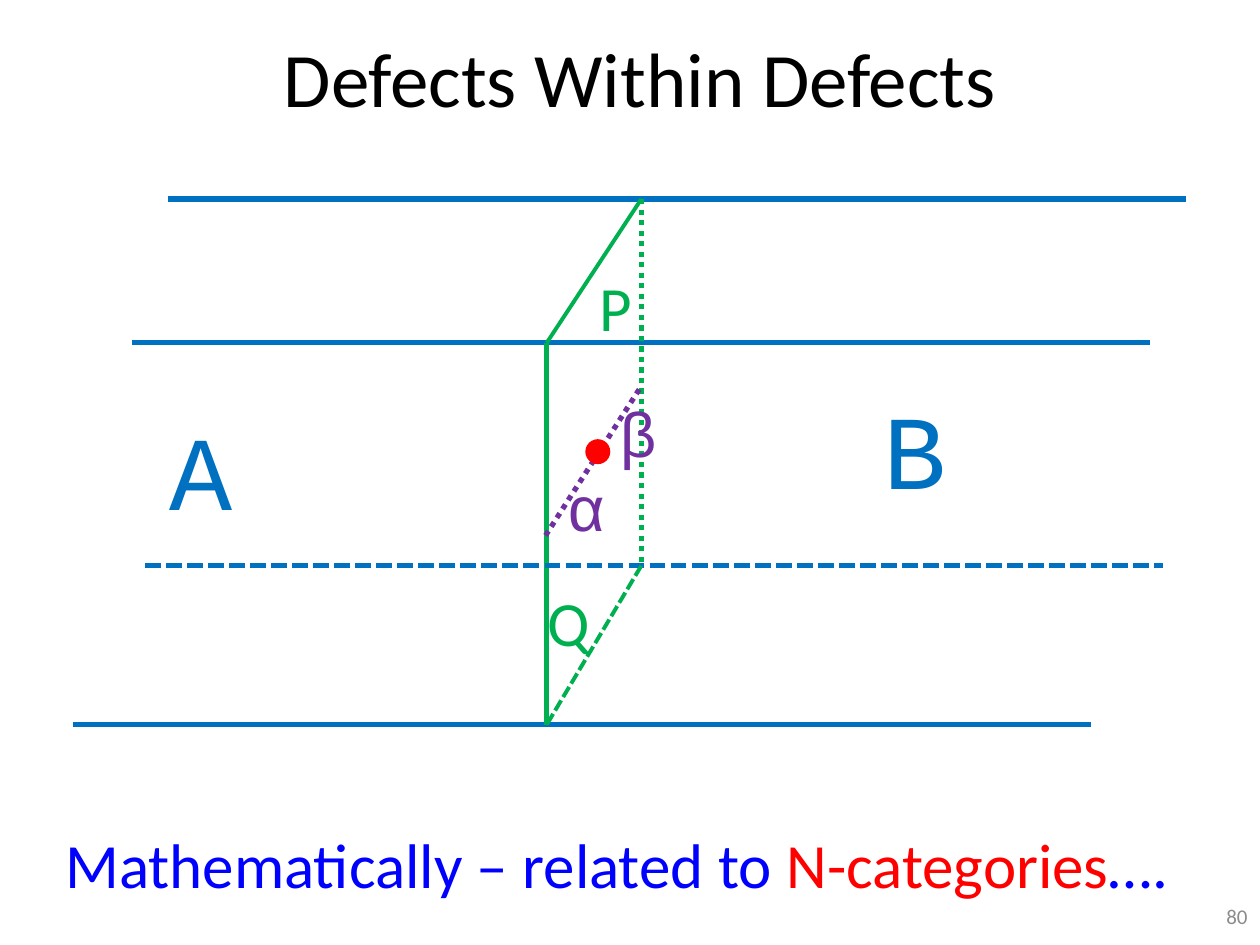
from typing import NamedTuple, Optional

from lxml.etree import SubElement
from pptx import Presentation
from pptx.dml.color import RGBColor
from pptx.enum.dml import MSO_LINE
from pptx.enum.shapes import MSO_CONNECTOR, MSO_SHAPE
from pptx.enum.text import MSO_ANCHOR, PP_ALIGN
from pptx.oxml.ns import qn
from pptx.util import Inches, Pt

BLACK = RGBColor(0x00, 0x00, 0x00)
GRAY = RGBColor(0x8C, 0x8C, 0x8C)
RED = RGBColor(0xFF, 0x00, 0x00)
BLUE = RGBColor(0x00, 0x00, 0xFF)
PLANE_BLUE = RGBColor(0x00, 0x70, 0xC0)
GREEN = RGBColor(0x00, 0xB0, 0x50)
PURPLE = RGBColor(0x70, 0x30, 0xA0)

DOT = MSO_LINE.ROUND_DOT
DASH = MSO_LINE.SQUARE_DOT
SYS_DASHES = {DOT: "sysDot", DASH: "sysDash"}

PLANE_WIDTH = 8.08
FRONT_X, BACK_X = 4.34, 5.09
BACK_TOP, FRONT_TOP, BACK_BOTTOM, FRONT_BOTTOM = 1.58, 2.72, 4.49, 5.75


class Line(NamedTuple):
    x1: float
    y1: float
    x2: float
    y2: float
    color: RGBColor
    weight: float = 3
    dash: Optional[MSO_LINE] = None


class Run(NamedTuple):
    text: str
    color: RGBColor


class Label(NamedTuple):
    left: float
    top: float
    width: float
    height: float
    runs: list[Run]
    size: float = 36
    font: str = "Calibri"
    align: PP_ALIGN = PP_ALIGN.LEFT
    anchor: MSO_ANCHOR = MSO_ANCHOR.TOP


def plane_edge(left: float, y: float, dash: Optional[MSO_LINE] = None) -> Line:
    return Line(left, y, left + PLANE_WIDTH, y, PLANE_BLUE, dash=dash)


LINES = [
    plane_edge(1.33, BACK_TOP),
    plane_edge(0.58, FRONT_BOTTOM),
    plane_edge(1.05, FRONT_TOP),
    Line(BACK_X, BACK_TOP, FRONT_X, FRONT_TOP, GREEN, 2.25),
    Line(FRONT_X, FRONT_TOP, FRONT_X, FRONT_BOTTOM, GREEN),
    Line(BACK_X, BACK_TOP, BACK_X, BACK_BOTTOM, GREEN, dash=DOT),
    plane_edge(1.15, BACK_BOTTOM, DASH),
    Line(BACK_X, BACK_BOTTOM, FRONT_X, FRONT_BOTTOM, GREEN, 2.25, DASH),
    Line(4.33, 4.25, 5.08, 3.08, PURPLE, dash=DOT),
]

LABELS = [
    Label(4.66, 2.08, 1.83, 0.71, [Run("P", GREEN)]),
    Label(4.25, 4.58, 2, 0.71, [Run("Q", GREEN)]),
    Label(4.41, 3.67, 1.42, 0.71, [Run("α", PURPLE)], font="Arial"),
    Label(4.83, 3.08, 1.83, 0.71, [Run("β", PURPLE)], font="Arial"),
    Label(1.25, 3.17, 1.58, 1.11, [Run("A", PLANE_BLUE)], 60, "Courier New"),
    Label(6.91, 3, 1.92, 1.11, [Run("B", PLANE_BLUE)], 60, "Courier New"),
    Label(7.67, 7.07, 2.33, 0.4, [Run("80", GRAY)], 12,
          align=PP_ALIGN.RIGHT, anchor=MSO_ANCHOR.MIDDLE),
    Label(0.42, 6.5, 9.08, 0.71, [
        Run("Mathematically – related to ", BLUE),
        Run("N-categories", RED),
        Run("….", BLUE),
    ]),
]


def fill_text(sp, label: Label) -> None:
    sp.left, sp.top = Inches(label.left), Inches(label.top)
    sp.width, sp.height = Inches(label.width), Inches(label.height)
    tf = sp.text_frame
    tf.word_wrap = True
    tf.vertical_anchor = label.anchor
    p = tf.paragraphs[0]
    p.alignment = label.align
    for run in label.runs:
        r = p.add_run()
        r.text = run.text
        r.font.name = label.font
        r.font.size = Pt(label.size)
        r.font.color.rgb = run.color


def draw_label(s, label: Label) -> None:
    fill_text(s.shapes.add_textbox(0, 0, 0, 0), label)


def draw_line(s, line: Line) -> None:
    sp = s.shapes.add_connector(
        MSO_CONNECTOR.STRAIGHT,
        Inches(line.x1), Inches(line.y1), Inches(line.x2), Inches(line.y2),
    )
    sp.line.color.rgb = line.color
    sp.line.width = Pt(line.weight)
    if line.dash is not None:
        sp.line.dash_style = line.dash
        dash = sp.line._ln.find(qn("a:prstDash"))
        dash.set("val", SYS_DASHES[line.dash])
    SubElement(sp._element.spPr, qn("a:effectLst"))


def draw_point(s, left: float, top: float, size: float) -> None:
    sp = s.shapes.add_shape(
        MSO_SHAPE.OVAL, Inches(left), Inches(top), Inches(size), Inches(size)
    )
    sp.shadow.inherit = False
    sp.fill.solid()
    sp.fill.fore_color.rgb = RED
    sp.line.color.rgb = RED
    sp.line.width = Pt(2)


def main() -> None:
    prs = Presentation()
    prs.slide_width, prs.slide_height = Inches(10), Inches(7.5)
    s = prs.slides.add_slide(prs.slide_layouts[5])
    fill_text(s.shapes.title, Label(
        0.58, -0.02, 9, 1.25, [Run("Defects Within Defects", BLACK)], 44,
        align=PP_ALIGN.CENTER, anchor=MSO_ANCHOR.MIDDLE,
    ))
    for line in LINES:
        draw_line(s, line)
    draw_point(s, 4.66, 3.5, 0.17)
    for label in LABELS:
        draw_label(s, label)
    prs.save("out.pptx")


if __name__ == "__main__":
    main()
